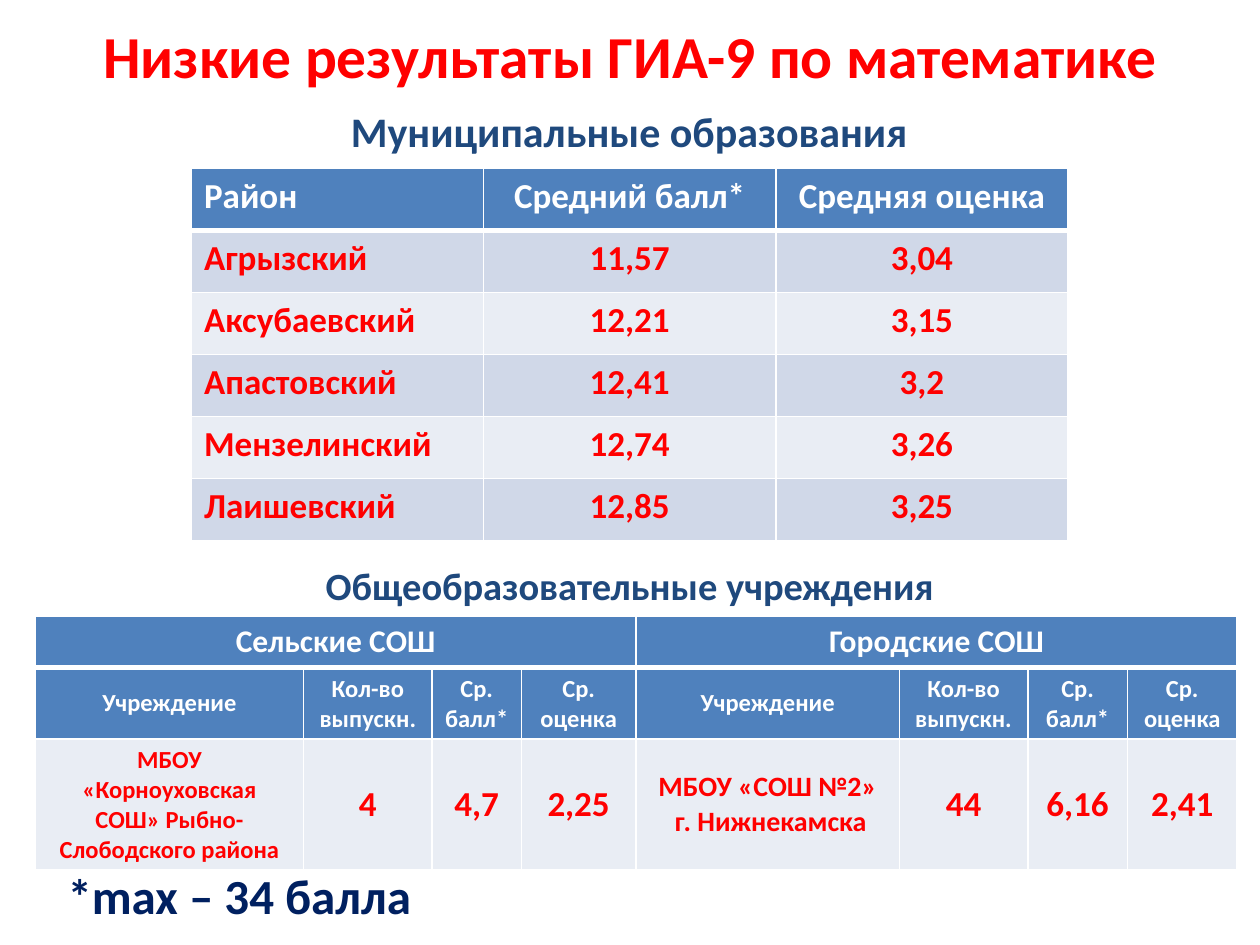
from dataclasses import dataclass

from lxml import etree
from pptx import Presentation
from pptx.dml.color import RGBColor
from pptx.enum.text import MSO_ANCHOR, PP_ALIGN
from pptx.oxml.ns import qn
from pptx.util import Cm, Pt

LEFT, CENTER = PP_ALIGN.LEFT, PP_ALIGN.CENTER
TOP, MIDDLE = MSO_ANCHOR.TOP, MSO_ANCHOR.MIDDLE


@dataclass(frozen=True)
class Theme:
    font: str = "Calibri"
    alert: str = "FF0000"
    heading: str = "1F497D"
    note: str = "002060"
    white: str = "FFFFFF"
    header: str = "4F81BD"
    bands: tuple = ("E9EDF4", "D0D8E8")
    title_size: int = 34
    note_size: int = 28
    heading_size: int = 24
    subheading_size: int = 22
    value_size: int = 20
    group_size: int = 18
    town_school_size: int = 16
    small_size: int = 14
    thin: int = 1
    thick: int = 3


class SlideBuilder:
    """Draws styled text and tables on the current slide."""

    def __init__(self, slide, theme):
        self.slide = slide
        self.theme = theme

    def fill_text(self, frame, text, size, color, align=CENTER):
        frame.text = text
        for paragraph in frame.paragraphs:
            paragraph.alignment = align
            style = {"name": self.theme.font, "size": Pt(size), "bold": True}
            for key, value in style.items():
                setattr(paragraph.font, key, value)
            paragraph.font.color.rgb = RGBColor.from_string(color)

    def text(self, box, text, size, color, align=CENTER, anchor=TOP, wrap=True):
        frame = self.slide.shapes.add_textbox(*map(Cm, box)).text_frame
        for key, value in {"word_wrap": wrap, "vertical_anchor": anchor}.items():
            setattr(frame, key, value)
        self.fill_text(frame, text, size, color, align)

    def table(self, left, top, widths, heights):
        area = map(Cm, (left, top, sum(widths), sum(heights)))
        table = self.slide.shapes.add_table(len(heights), len(widths), *area).table
        for column, width in zip(table.columns, widths):
            column.width = Cm(width)
        for row, height in zip(table.rows, heights):
            row.height = Cm(height)
        for index, row in enumerate(table.rows):
            for cell in row.cells:
                self.borders(cell, index)
        return table

    def borders(self, cell, row):
        theme = self.theme
        weights = {"L": theme.thin, "R": theme.thin,
                   "T": theme.thick if row == 1 else theme.thin,
                   "B": theme.thick if row == 0 else theme.thin}
        properties = cell._tc.get_or_add_tcPr()
        for side, weight in weights.items():
            line = etree.SubElement(properties, qn(f"a:ln{side}"), w=str(Pt(weight)))
            fill = etree.SubElement(line, qn("a:solidFill"))
            etree.SubElement(fill, qn("a:srgbClr"), val=theme.white)

    def cell(self, cell, text, size, color, fill, align=CENTER, anchor=MIDDLE):
        cell.fill.solid()
        cell.fill.fore_color.rgb = RGBColor.from_string(fill)
        cell.vertical_anchor = anchor
        self.fill_text(cell.text_frame, text, size, color, align)


DISTRICTS = [
    ("Район", "Средний балл*", "Средняя оценка"),
    ("Агрызский", "11,57", "3,04"),
    ("Аксубаевский", "12,21", "3,15"),
    ("Апастовский", "12,41", "3,2"),
    ("Мензелинский", "12,74", "3,26"),
    ("Лаишевский", "12,85", "3,25"),
]
SCHOOL_GROUPS = ("Сельские СОШ", "Городские СОШ")
SCHOOL_FIELDS = ("Учреждение", "Кол-во выпускн.", "Ср. балл*", "Ср. оценка")
SCHOOLS = (
    "МБОУ «Корноуховская СОШ» Рыбно-Слободского района", "4", "4,7", "2,25",
    "МБОУ «СОШ №2»\n г. Нижнекамска", "44", "6,16", "2,41",
)


def add_districts(builder):
    theme = builder.theme
    table = builder.table(3.86, 3.4, [5.89] * 3, [1.25] * len(DISTRICTS))
    for r, record in enumerate(DISTRICTS):
        color = theme.alert if r else theme.white
        fill = theme.bands[r % 2] if r else theme.header
        for c, value in enumerate(record):
            builder.cell(table.cell(r, c), value, theme.value_size, color, fill,
                         CENTER if c else LEFT, TOP)


def add_schools(builder):
    theme = builder.theme
    widths = [5.41, 2.59, 1.8, 2.31, 5.31, 2.59, 2.01, 2.21]
    table = builder.table(0.71, 12.42, widths, [1.04, 1.44, 2.63])
    span = len(SCHOOL_FIELDS)
    for g, group in enumerate(SCHOOL_GROUPS):
        first = table.cell(0, g * span)
        first.merge(table.cell(0, (g + 1) * span - 1))
        builder.cell(first, group, theme.group_size, theme.white, theme.header)
    name_sizes = {0: theme.small_size, span: theme.town_school_size}
    for c, value in enumerate(SCHOOLS):
        builder.cell(table.cell(1, c), SCHOOL_FIELDS[c % span], theme.small_size,
                     theme.white, theme.header)
        builder.cell(table.cell(2, c), value, name_sizes.get(c, theme.value_size),
                     theme.alert, theme.bands[0])


def main():
    theme = Theme()
    deck = Presentation()
    deck.slide_width, deck.slide_height = Cm(25.4), Cm(19.05)
    builder = SlideBuilder(deck.slides.add_slide(deck.slide_layouts[6]), theme)

    builder.text((1.27, 0.13, 22.86, 1.96), "Низкие результаты ГИА-9 по математике",
                 theme.title_size, theme.alert, anchor=MIDDLE)
    builder.text((2.18, 2.01, 21.01, 1.27), "Муниципальные образования",
                 theme.heading_size, theme.heading)
    add_districts(builder)
    builder.text((2.79, 11.2, 19.81, 1.19), "Общеобразовательные учреждения",
                 theme.subheading_size, theme.heading)
    add_schools(builder)
    builder.text((0.89, 17.32, 7.75, 1.45), " *max – 34 балла",
                 theme.note_size, theme.note, align=LEFT, wrap=False)
    deck.save("out.pptx")


if __name__ == "__main__":
    main()
